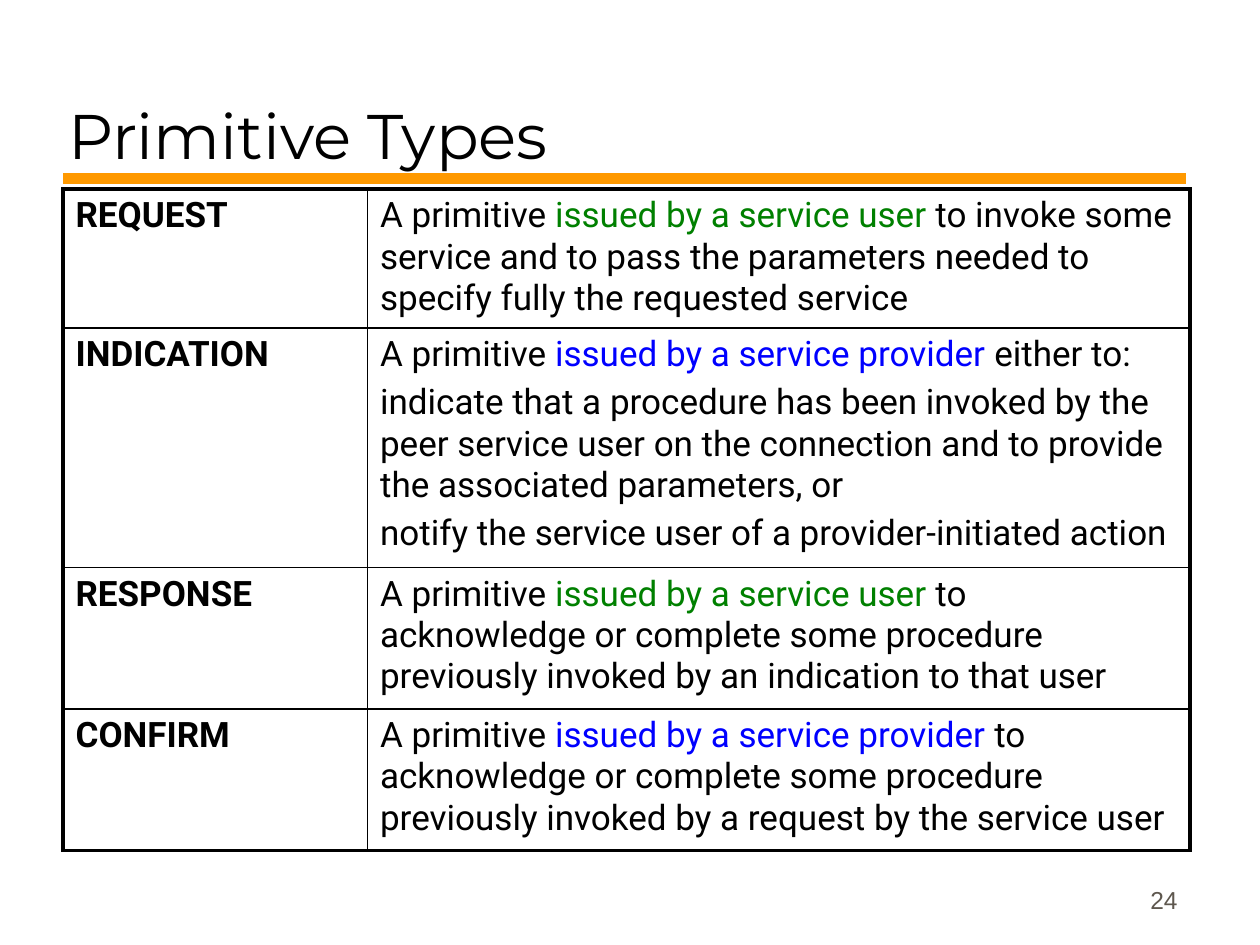
from lxml import etree
from pptx import Presentation
from pptx.dml.color import RGBColor
from pptx.enum.shapes import MSO_CONNECTOR
from pptx.enum.text import MSO_ANCHOR, PP_ALIGN
from pptx.oxml.ns import qn
from pptx.util import Pt

STRAIGHT = MSO_CONNECTOR.STRAIGHT
BOTTOM = MSO_ANCHOR.BOTTOM
LEFT, RIGHT = PP_ALIGN.LEFT, PP_ALIGN.RIGHT
BLACK, GREEN, BLUE = "000000", "008000", "0000FF"


def rgb(value):
    return RGBColor.from_string(value)


def add_run(p, text, font, size, color=BLACK, bold=False):
    r = p.add_run()
    r.text = text
    r.font.name = font
    r.font.size = Pt(size)
    r.font.bold = bold
    r.font.color.rgb = rgb(color)


prs = Presentation()
prs.slide_width, prs.slide_height = Pt(720), Pt(540)
s = prs.slides.add_slide(prs.slide_layouts[6])

rule = s.shapes.add_connector(STRAIGHT, Pt(36), Pt(102), Pt(678), Pt(102))
rule.line.color.rgb = rgb("FF9900")
rule.line.width = Pt(6)
etree.SubElement(rule.element.spPr, qn("a:effectLst"))

labels = [
    ("Primitive Types", 32, 12, 646, 90, "Montserrat", 36, BLACK, LEFT),
    ("24", 530, 490, 150, 36, "Arial", 14, "5E574E", RIGHT),
]
for text, x, y, w, h, font, size, color, align in labels:
    sp = s.shapes.add_textbox(Pt(x), Pt(y), Pt(w), Pt(h))
    tf = sp.text_frame
    tf.word_wrap = True
    tf.vertical_anchor = BOTTOM
    p = tf.paragraphs[0]
    p.alignment = align
    add_run(p, text, font, size, color)

user = ("issued by a service user", GREEN)
provider = ("issued by a service provider", BLUE)
primitives = [
    ("REQUEST", 79.4, user,
     [" to invoke some service and to pass the parameters needed to specify fully the requested service"]),
    ("INDICATION", 136.9, provider,
     [" either to:",
      "indicate that a procedure has been invoked by the peer service user on the connection "
      "and to provide the associated parameters, or",
      "notify the service user of a provider-initiated action"]),
    ("RESPONSE", 80.8, user,
     [" to acknowledge or complete some procedure previously invoked by an indication to that user"]),
    ("CONFIRM", 80.8, provider,
     [" to acknowledge or complete some procedure previously invoked by a request by the service user"]),
]
widths = [174, 470]
heights = [height for _, height, _, _ in primitives]
last_row, last_col = len(heights) - 1, len(widths) - 1

table = s.shapes.add_table(len(heights), len(widths), Pt(36), Pt(108),
                           Pt(sum(widths)), Pt(sum(heights))).table
table.first_row = False
table.horz_banding = False
for column, width in zip(table.columns, widths):
    column.width = Pt(width)

for i, (name, height, (issuer, color), texts) in enumerate(primitives):
    table.rows[i].height = Pt(height)
    add_run(table.cell(i, 0).text_frame.paragraphs[0], name, "Roboto", 20, bold=True)

    tf = table.cell(i, 1).text_frame
    p = tf.paragraphs[0]
    add_run(p, "A primitive ", "Roboto", 20)
    add_run(p, issuer, "Roboto", 20, color)
    add_run(p, texts[0], "Roboto", 20)
    for text in texts[1:]:
        p = tf.add_paragraph()
        p.space_before = Pt(4)
        add_run(p, text, "Roboto", 20)

    for j in range(len(widths)):
        cell = table.cell(i, j)
        cell.fill.background()
        tcPr = cell._tc.get_or_add_tcPr()
        outer_sides = [("L", j == 0), ("R", j == last_col), ("T", i == 0), ("B", i == last_row)]
        for k, (side, outer) in enumerate(outer_sides):
            ln = etree.Element(qn(f"a:ln{side}"), w=str(Pt(2.25 if outer else 1)))
            fill = etree.SubElement(ln, qn("a:solidFill"))
            etree.SubElement(fill, qn("a:srgbClr"), val=BLACK)
            tcPr.insert(k, ln)

prs.save("out.pptx")
